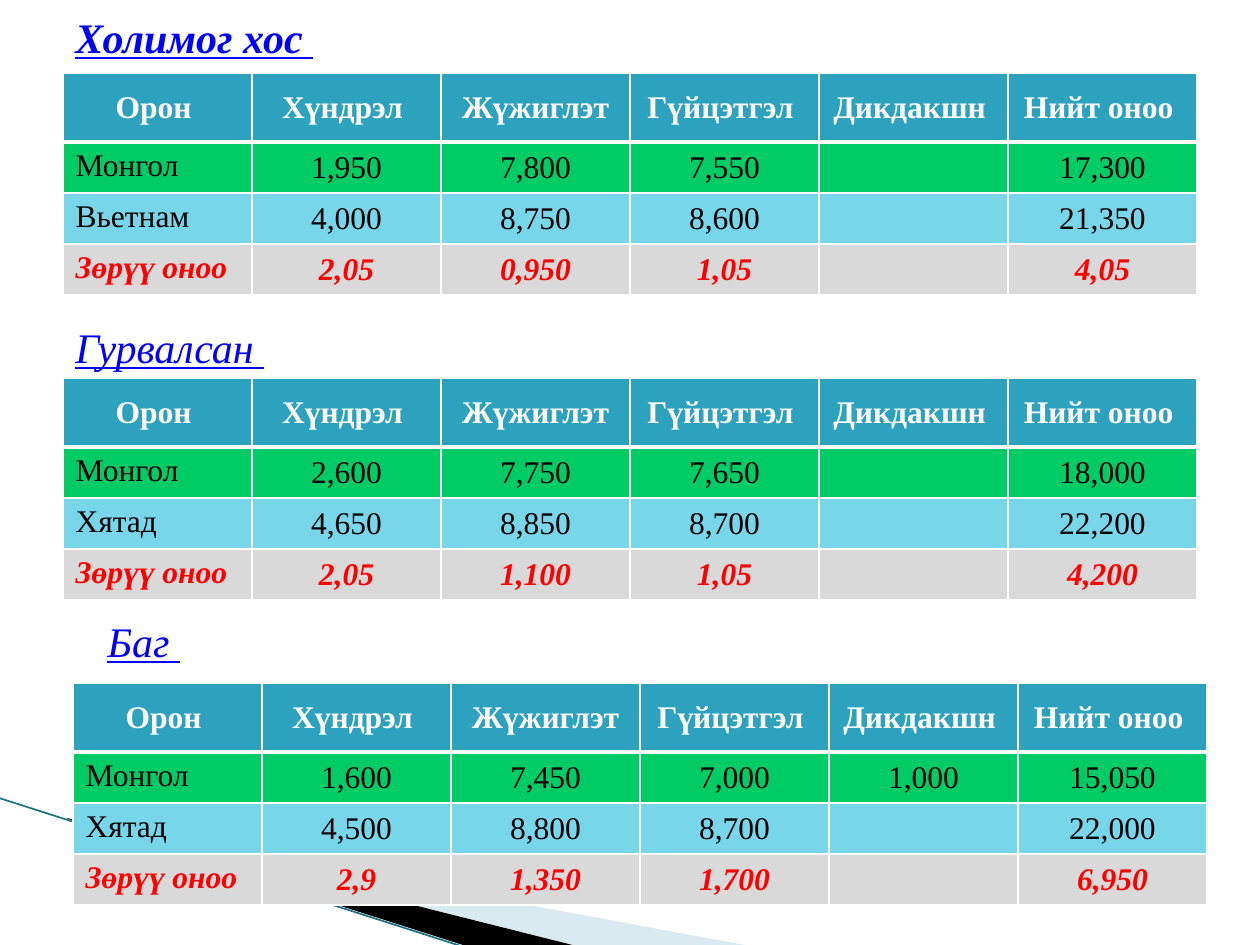
from lxml import etree
from pptx import Presentation
from pptx.dml.color import RGBColor
from pptx.enum.shapes import MSO_CONNECTOR as Connector
from pptx.enum.text import MSO_ANCHOR as Anchor, PP_ALIGN as Align
from pptx.oxml.ns import qn
from pptx.util import Emu, Pt

PX = 914400 / 126
FONT = "Times New Roman"
COLORS = {
    "white": "FFFFFF", "black": "000000", "red": "FF0000", "title": "0000FF",
    "header": "2DA2BF", "green": "00CC66", "aqua": "78D6EA", "gray": "D9D9D9",
    "pale": "A0CBDC", "teal": "1B7085",
}
HEADERS = ["Орон ", "Хүндрэл ", "Жүжиглэт", "Гүйцэтгэл ", "Дикдакшн ", "Нийт оноо "]
ROW_HEIGHTS = [69, 51, 51, 51]
COLUMN_WIDTH = 189
ROW_STYLES = [
    ("header", dict(color="white", bold=True)),
    ("green", dict(color="black")),
    ("aqua", dict(color="black")),
    ("gray", dict(color="red", bold=True, italic=True)),
]

# Each event: title, title box, title format, table corner, rows of scores
EVENTS = [
    ("Холимог хос ", (63, 0, 357, 73), dict(bold=True, anchor=Anchor.MIDDLE), (63, 73), [
        ["Монгол", "1,950", "7,800", "7,550", "", "17,300"],
        ["Вьетнам", "4,000", "8,750", "8,600", "", "21,350"],
        ["Зөрүү оноо", "2,05", "0,950", "1,05", "", "4,05"]]),
    ("Гурвалсан ", (63, 315, 284, 63), {}, (63, 378), [
        ["Монгол", "2,600", "7,750", "7,650", "", "18,000"],
        ["Хятад", "4,650", "8,850", "8,700", "", "22,200"],
        ["Зөрүү оноо", "2,05", "1,100", "1,05", "", "4,200"]]),
    ("Баг ", (95, 609, 98, 63), dict(wrap=False), (73, 683), [
        ["Монгол", "1,600", "7,450", "7,000", "1,000", "15,050"],
        ["Хятад", "4,500", "8,800", "8,700", "", "22,000"],
        ["Зөрүү оноо", "2,9", "1,350", "1,700", "", "6,950"]]),
]


def px(value):
    return Emu(round(value * PX))


def rgb(name):
    return RGBColor.from_string(COLORS[name])


def write_text(frame, text, size=18, color="black", bold=False, italic=False,
               underline=False, align=Align.LEFT, anchor=Anchor.TOP, wrap=True):
    frame.word_wrap = wrap
    frame.vertical_anchor = anchor
    paragraph = frame.paragraphs[0]
    paragraph.alignment = align
    run = paragraph.add_run()
    run.text = text
    font = run.font
    font.name, font.size, font.color.rgb = FONT, Pt(size), rgb(color)
    font.bold, font.italic, font.underline = bold, italic, underline


def add_borders(cell, bottom_width):
    properties = cell._tc.get_or_add_tcPr()
    for side, width in (("L", 1), ("R", 1), ("T", 1), ("B", bottom_width)):
        line = etree.SubElement(properties, qn(f"a:ln{side}"), w=str(Pt(width)))
        fill = etree.SubElement(line, qn("a:solidFill"))
        etree.SubElement(fill, qn("a:srgbClr"), val=COLORS["white"])


def add_wedge(slide, points, color, alpha=None):
    builder = slide.shapes.build_freeform(*points[0], scale=PX)
    builder.add_line_segments(points[1:], close=True)
    shape = builder.convert_to_shape()
    shape.shadow.inherit = False
    shape.line.fill.background()
    shape.fill.solid()
    shape.fill.fore_color.rgb = rgb(color)
    if alpha:
        color_element = shape._element.spPr.find(qn("a:solidFill"))[0]
        etree.SubElement(color_element, qn("a:alpha"), val=str(alpha * 1000))


def add_corner(slide, left, top):
    """Wedges and line in the bottom left corner."""
    def place(points):
        return [(left + x, top + y) for x, y in points]

    add_wedge(slide, place([(69, 22), (750, 148), (575, 148), (69, 21)]), "pale", alpha=40)
    add_wedge(slide, place([(67, 20), (576, 148), (469, 149), (68, 21)]), "black")
    ends = [px(value) for point in place([(-1, 0), (467, 150)]) for value in point]
    connector = slide.shapes.add_connector(Connector.STRAIGHT, *ends)
    connector.line.color.rgb = rgb("teal")
    connector.line.width = Pt(0.95)
    etree.SubElement(connector._element.spPr, qn("a:effectLst"))


def add_title(slide, box, text, **text_format):
    text_box = slide.shapes.add_textbox(*map(px, box))
    write_text(text_box.text_frame, text, size=24, color="title", italic=True,
               underline=True, **text_format)


def add_score_table(slide, left, top, scores):
    rows = [HEADERS] + scores
    box = (left, top, COLUMN_WIDTH * len(HEADERS), sum(ROW_HEIGHTS))
    table = slide.shapes.add_table(len(rows), len(HEADERS), *map(px, box)).table
    table.horz_banding = False
    for column in table.columns:
        column.width = px(COLUMN_WIDTH)
    for row_index, (values, (fill, text_format)) in enumerate(zip(rows, ROW_STYLES)):
        table.rows[row_index].height = px(ROW_HEIGHTS[row_index])
        for column_index, value in enumerate(values):
            cell = table.cell(row_index, column_index)
            add_borders(cell, bottom_width=3 if row_index == 0 else 1)
            cell.fill.solid()
            cell.fill.fore_color.rgb = rgb(fill)
            if not value:
                continue
            is_country = row_index > 0 and column_index == 0
            write_text(cell.text_frame, value,
                       align=Align.LEFT if is_country else Align.CENTER, **text_format)
            cell.vertical_anchor = Anchor.TOP if is_country else Anchor.MIDDLE


def main():
    presentation = Presentation()
    presentation.slide_width, presentation.slide_height = px(1260), px(945)
    slide = presentation.slides.add_slide(presentation.slide_layouts[6])
    add_corner(slide, 0, 798)
    for title, title_box, title_format, corner, scores in EVENTS:
        add_title(slide, title_box, title, **title_format)
        add_score_table(slide, *corner, scores)
    presentation.save("out.pptx")


if __name__ == "__main__":
    main()
